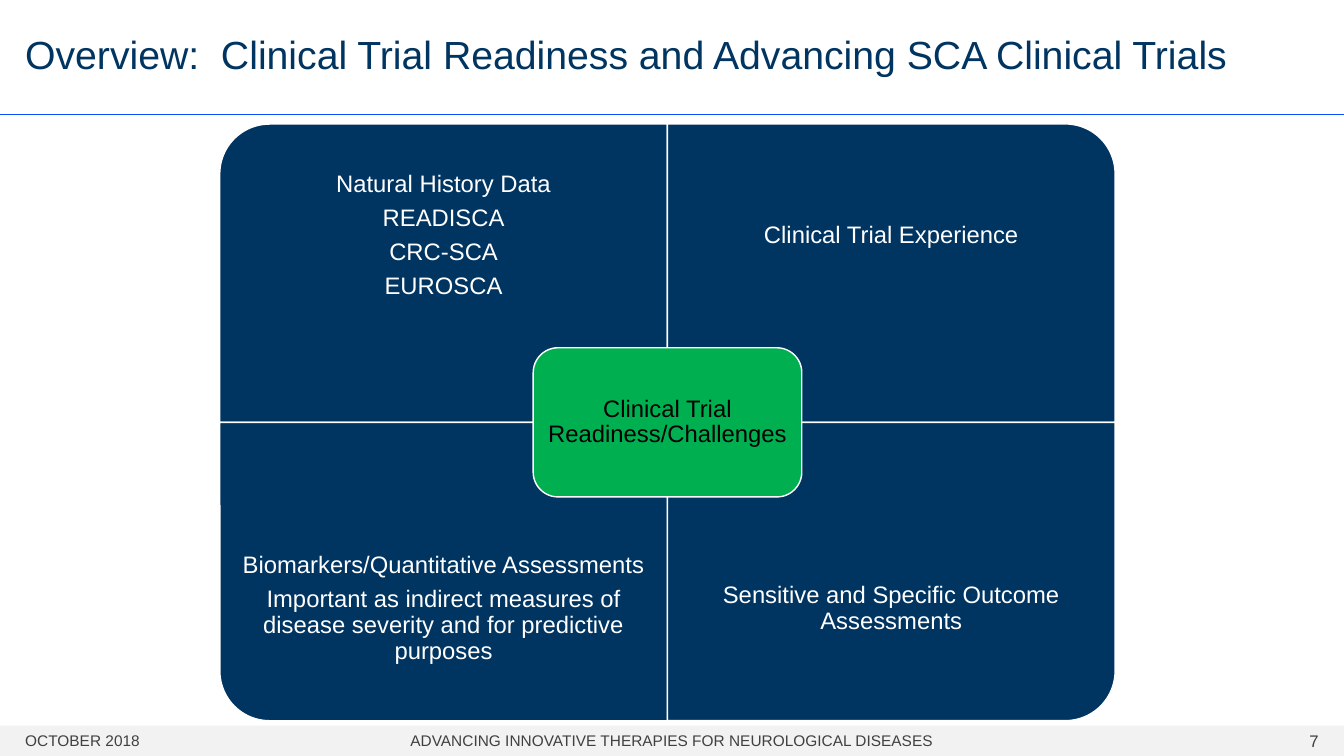
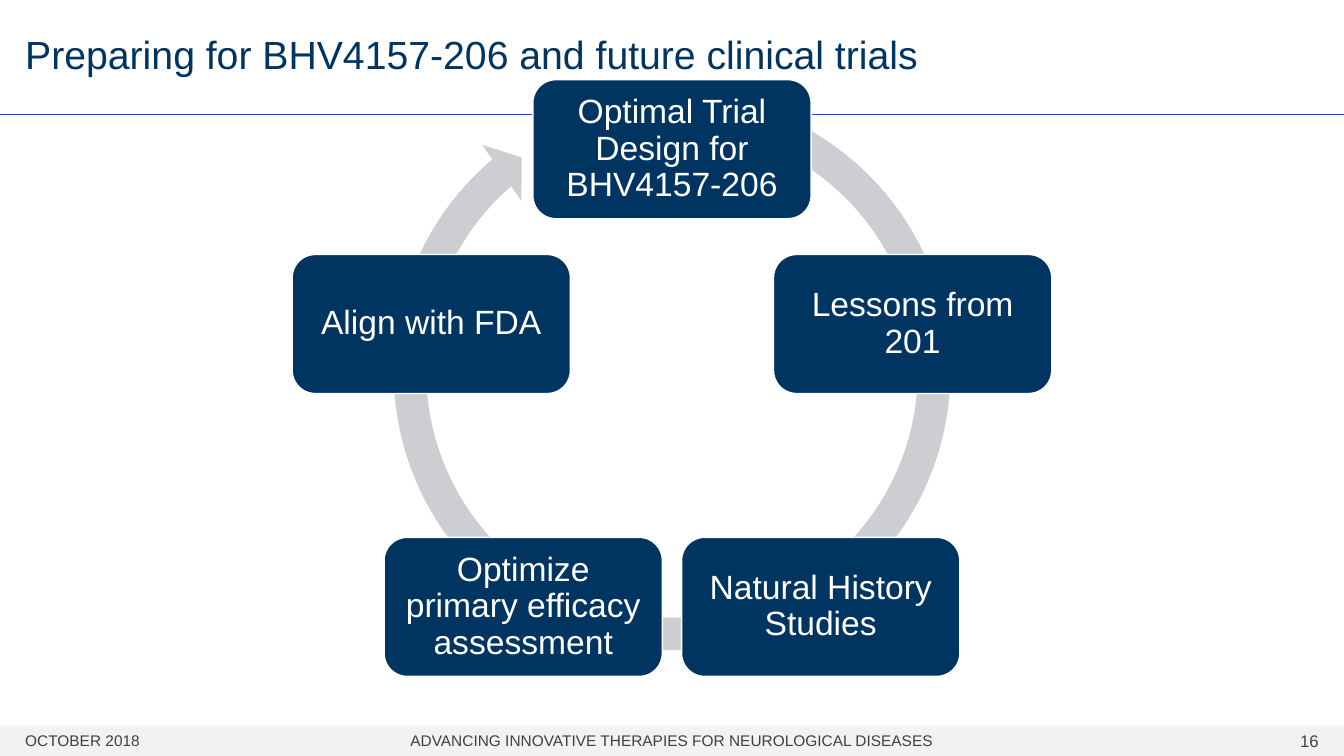
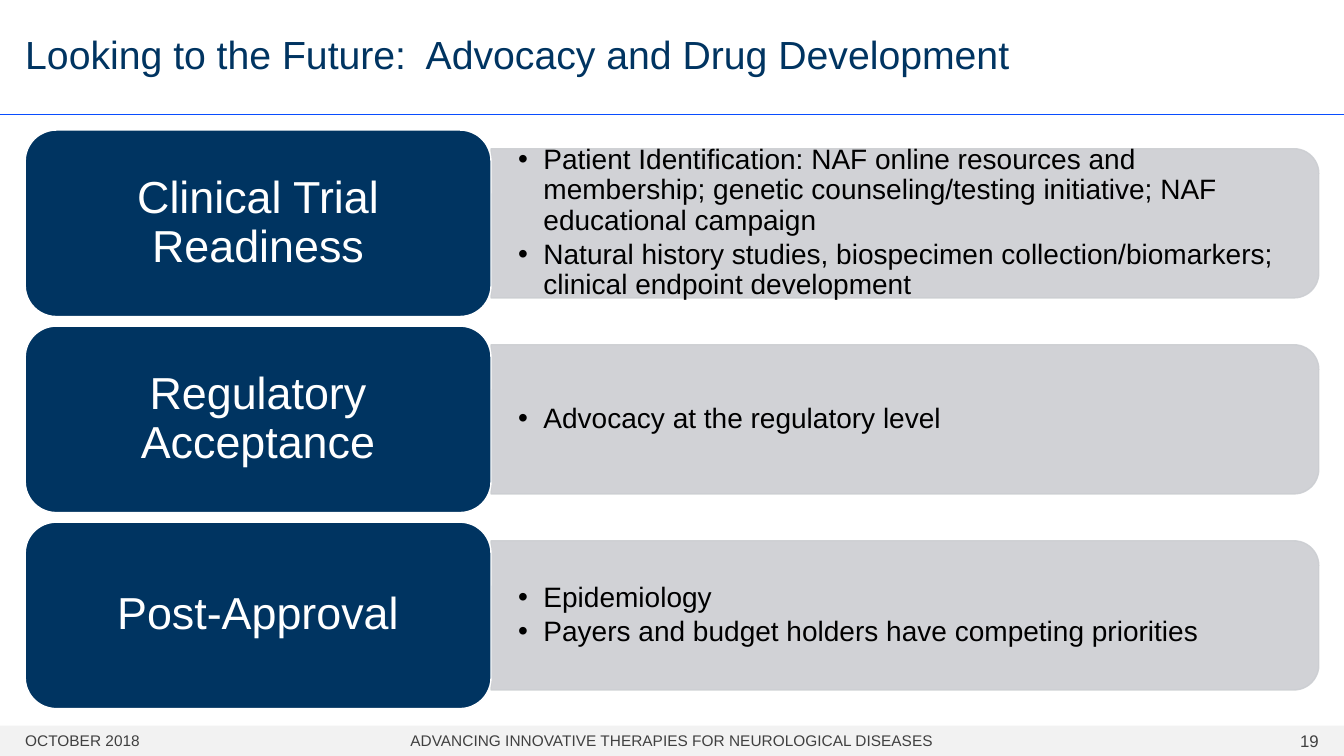
import math

import lxml.etree
import pptx
import pptx.dml.color
import pptx.enum.shapes
import pptx.enum.text
import pptx.oxml.ns
import pptx.util

Inches = pptx.util.Inches
Pt = pptx.util.Pt
SHAPES = pptx.enum.shapes.MSO_SHAPE
ALIGN = pptx.enum.text.PP_ALIGN

FONT = "Arial"
NAVY, WHITE, BLACK = "003461", "FFFFFF", "000000"
GREY, GREEN, BLUE = "CCCED2", "00B050", "094DFF"
FOOTER_FILL, FOOTER_TEXT = "F2F2F2", "404040"

SLIDE_WIDTH, SLIDE_HEIGHT = 13.33, 7.5
MARGIN, TITLE_HEIGHT, FOOTER_TOP, FOOTER_HEIGHT = 0.25, 1.13, 7.2, 0.3
FOOTER_DATE = "OCTOBER 2018"
FOOTER_NAME = "ADVANCING INNOVATIVE THERAPIES FOR NEUROLOGICAL DISEASES"

QUADRANTS_TITLE = "Overview:  Clinical Trial Readiness and Advancing SCA Clinical Trials"
QUADRANTS = [
    (0, 0, 270, ["Natural History Data", "READISCA", "CRC-SCA", "EUROSCA"]),
    (1, 0, 0, ["Clinical Trial Experience"]),
    (0, 1, 180, [
        "Biomarkers/Quantitative Assessments",
        "Important as indirect measures of disease severity and for predictive purposes",
    ]),
    (1, 1, 90, ["Sensitive and Specific Outcome Assessments"]),
]
QUADRANTS_CENTER = "Clinical Trial Readiness/Challenges"

CYCLE_TITLE = "Preparing for BHV4157-206 and future clinical trials"
CYCLE_STEPS = [
    "Optimal Trial Design for BHV4157-206",
    "Lessons from 201",
    "Natural History Studies",
    "Optimize primary efficacy assessment",
    "Align with FDA",
]
CYCLE_ARROW = [0.055, 3.307, 137.676, 173.91, 0.058]

FUTURE_TITLE = "Looking to the Future:  Advocacy and Drug Development"
FUTURE_ROWS = [
    ("Clinical Trial Readiness", [
        "Patient Identification: NAF online resources and membership; "
        "genetic counseling/testing initiative; NAF educational campaign",
        "Natural history studies, biospecimen collection/biomarkers; "
        "clinical endpoint development",
    ]),
    ("Regulatory Acceptance", ["Advocacy at the regulatory level"]),
    ("Post-Approval", [
        "Epidemiology",
        "Payers and budget holders have competing priorities",
    ]),
]


def color(value):
    return pptx.dml.color.RGBColor.from_string(value)


def add_bullet(paragraph):
    properties = paragraph._p.get_or_add_pPr()
    properties.set("marL", str(Inches(0.25)))
    properties.set("indent", str(-Inches(0.25)))
    qn = pptx.oxml.ns.qn
    lxml.etree.SubElement(properties, qn("a:buFont")).set("typeface", FONT)
    lxml.etree.SubElement(properties, qn("a:buChar")).set("char", "•")


def write(shape, texts, size, text_color, align=ALIGN.CENTER, insets=(0, 0),
          line_spacing=0.9, space_after=0, bullets=False):
    frame = shape.text_frame
    frame.word_wrap = True
    frame.auto_size = pptx.enum.text.MSO_AUTO_SIZE.NONE
    frame.vertical_anchor = pptx.enum.text.MSO_ANCHOR.MIDDLE
    frame.margin_left = frame.margin_right = Inches(insets[0])
    frame.margin_top = frame.margin_bottom = Inches(insets[1])
    for index, text in enumerate(texts):
        paragraph = frame.add_paragraph() if index else frame.paragraphs[0]
        if bullets:
            add_bullet(paragraph)
        paragraph.alignment = align
        paragraph.line_spacing = line_spacing
        paragraph.space_after = Pt(space_after)
        run = paragraph.add_run()
        run.text = text
        run.font.name = FONT
        run.font.size = Pt(size)
        run.font.color.rgb = color(text_color)


def add_text(slide, left, top, width, height, texts, size, text_color, **style):
    box = slide.shapes.add_textbox(Inches(left), Inches(top), Inches(width), Inches(height))
    write(box, texts, size, text_color, **style)


def add_shape(slide, kind, left, top, width, height, fill, line=None, rotation=0):
    if rotation % 180:
        left, top = left + (width - height) / 2, top + (height - width) / 2
        width, height = height, width
    shape = slide.shapes.add_shape(kind, Inches(left), Inches(top), Inches(width), Inches(height))
    shape.rotation = rotation
    shape.shadow.inherit = False
    shape.fill.solid()
    shape.fill.fore_color.rgb = color(fill)
    if line:
        shape.line.color.rgb = color(line)
        shape.line.width = Pt(1)
    else:
        shape.line.fill.background()
    return shape


def add_rounded_box(slide, left, top, width, height, text, size, insets,
                    fill=NAVY, text_color=WHITE):
    box = add_shape(slide, SHAPES.ROUNDED_RECTANGLE, left, top, width, height, fill, WHITE)
    write(box, [text], size, text_color, insets=insets)


def set_opacity(shape, percent):
    qn = pptx.oxml.ns.qn
    for element in shape._element.spPr.iter(qn("a:srgbClr")):
        lxml.etree.SubElement(element, qn("a:alpha")).set("val", str(percent * 1000))


def add_base_slide(presentation, title, number):
    slide = presentation.slides.add_slide(presentation.slide_layouts[5])
    heading = slide.shapes.title
    heading.left, heading.top = Inches(MARGIN), Inches(0)
    heading.width, heading.height = Inches(SLIDE_WIDTH - MARGIN), Inches(TITLE_HEIGHT)
    write(heading, [title], 28, NAVY, align=ALIGN.LEFT)

    add_shape(slide, SHAPES.RECTANGLE, 0, FOOTER_TOP, SLIDE_WIDTH, FOOTER_HEIGHT, FOOTER_FILL)
    rule = slide.shapes.add_connector(
        pptx.enum.shapes.MSO_CONNECTOR.STRAIGHT,
        Inches(0), Inches(TITLE_HEIGHT), Inches(SLIDE_WIDTH), Inches(TITLE_HEIGHT))
    rule.line.color.rgb = color(BLUE)
    rule.line.width = Pt(0.5)
    lxml.etree.SubElement(rule._element.spPr, pptx.oxml.ns.qn("a:effectLst"))

    for left, width, text, size, align in [
        (MARGIN, 2, FOOTER_DATE, 11, ALIGN.LEFT),
        ((SLIDE_WIDTH - 7) / 2, 7, FOOTER_NAME, 11, ALIGN.CENTER),
        (SLIDE_WIDTH - MARGIN - 2, 2, str(number), 12, ALIGN.RIGHT),
    ]:
        add_text(slide, left, FOOTER_TOP, width, FOOTER_HEIGHT, [text], size, FOOTER_TEXT,
                 align=align, line_spacing=1)
    return slide


def build_quadrants(presentation):
    slide = add_base_slide(presentation, QUADRANTS_TITLE, 7)
    left, top, width, height = 2.18, 1.23, 4.44, 2.96
    text_height = height * 0.75
    for column, row, rotation, texts in QUADRANTS:
        x, y = left + column * width, top + row * height
        add_shape(slide, SHAPES.ROUND_1_RECTANGLE, x, y, width, height, NAVY, WHITE, rotation)
        add_text(slide, x, y + row * (height - text_height), width, text_height, texts,
                 17, WHITE, insets=(0.13, 0.13), space_after=6)
    center_width, center_height = width * 0.6, height / 2
    add_rounded_box(slide, left + width - center_width / 2, top + height - center_height / 2,
                    center_width, center_height, QUADRANTS_CENTER, 17, (0.07, 0.07),
                    GREEN, BLACK)


def build_cycle(presentation):
    slide = add_base_slide(presentation, CYCLE_TITLE, 16)
    center_x, center_y, radius = SLIDE_WIDTH / 2, 3.99, 2.51
    width, height, arrow_size = 2.76, 1.38, 5.88
    arrow = add_shape(slide, SHAPES.CIRCULAR_ARROW, center_x - arrow_size / 2, 0.75,
                      arrow_size, arrow_size, GREY)
    for index, value in enumerate(CYCLE_ARROW):
        arrow.adjustments[index] = value
    for index, text in enumerate(CYCLE_STEPS):
        angle = 2 * math.pi * index / len(CYCLE_STEPS)
        x = center_x + radius * math.sin(angle)
        y = center_y - radius * math.cos(angle)
        add_rounded_box(slide, x - width / 2, y - height / 2, width, height, text, 24, (0.1, 0.1))


def build_future(presentation):
    slide = add_base_slide(presentation, FUTURE_TITLE, 19)
    top, pitch, label_width, label_height = 1.29, 1.945, 4.62, 1.85
    bar_left, bar_width, bar_height = MARGIN + label_width, 8.21, 1.48
    text_width, text_height = 8.14, 1.34
    for index, (label, points) in enumerate(FUTURE_ROWS):
        y = top + index * pitch
        middle = y + label_height / 2
        bar = add_shape(slide, SHAPES.ROUND_2_SAME_RECTANGLE, bar_left, middle - bar_height / 2,
                        bar_width, bar_height, GREY, GREY, 90)
        set_opacity(bar, 90)
        add_text(slide, bar_left, middle - text_height / 2, text_width, text_height, points,
                 20, BLACK, align=ALIGN.LEFT, insets=(0.27, 0.14), space_after=3, bullets=True)
        add_rounded_box(slide, MARGIN, y, label_width, label_height, label, 32, (0.13, 0.07))


def main():
    presentation = pptx.Presentation()
    presentation.slide_width = Inches(SLIDE_WIDTH)
    presentation.slide_height = Inches(SLIDE_HEIGHT)
    build_quadrants(presentation)
    build_cycle(presentation)
    build_future(presentation)
    presentation.save("out.pptx")


if __name__ == "__main__":
    main()
